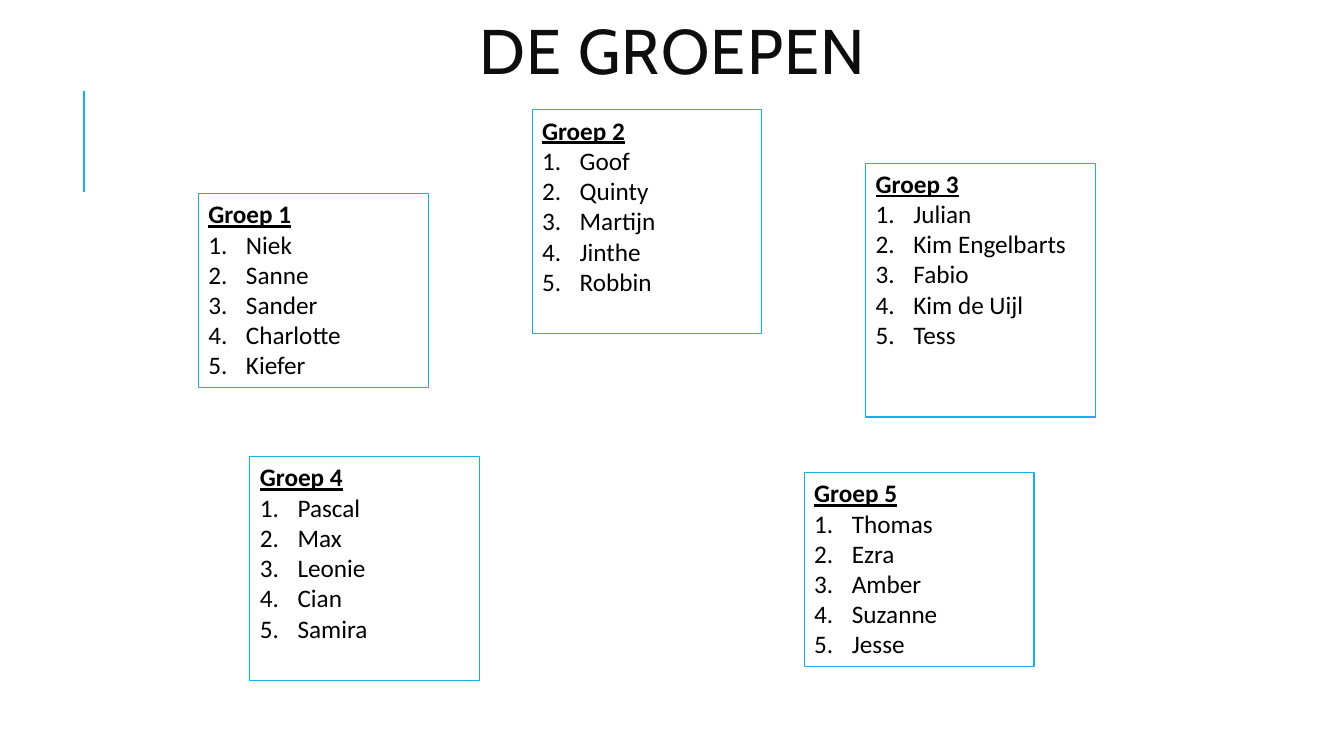
from dataclasses import dataclass

from lxml.etree import SubElement
from pptx import Presentation
from pptx.dml.color import RGBColor as Color
from pptx.enum.shapes import MSO_CONNECTOR as Connector, MSO_SHAPE as Shape
from pptx.enum.text import MSO_ANCHOR as Anchor, MSO_AUTO_SIZE as AutoSize, PP_ALIGN as Align
from pptx.oxml.ns import qn
from pptx.util import Cm, Pt


@dataclass(frozen=True)
class Theme:
    """Colours, fonts and type sizes of the slide."""
    accent: Color = Color(0x1C, 0xAD, 0xE4)
    title_color: Color = Color(0x0D, 0x0D, 0x0D)
    text_color: Color = Color(0, 0, 0)
    title_font: str = "Cabin"
    body_font: str = "Calibri"
    title_size: Pt = Pt(45)
    body_size: Pt = Pt(18)


THEME = Theme()
BOX_WIDTH = 5.79
BOX_HEIGHT = 4.88
LINE_HEIGHT = 0.76
NUMBER_INDENT = Cm(0.95)

# name, left, top, spare lines, members
GROUPS = [
    ("Groep 5", 20.27, 11.91, 0, ["Thomas", "Ezra", "Amber", "Suzanne", "Jesse"]),
    ("Groep 2", 13.41, 2.77, 1, ["Goof", "Quinty", "Martijn", "Jinthe", "Robbin"]),
    ("Groep 3", 21.82, 4.11, 2, ["Julian", "Kim Engelbarts", "Fabio", "Kim de Uijl", "Tess"]),
    ("Groep 4", 6.3, 11.51, 1, ["Pascal", "Max", "Leonie", "Cian", "Samira"]),
    ("Groep 1", 5, 4.88, 0, ["Niek", "Sanne", "Sander", "Charlotte", "Kiefer"]),
]


def apply_format(target, values):
    """Set every attribute named in values on the target."""
    for name, value in values.items():
        setattr(target, name, value)


def add_text(paragraph, text, color, **font_values):
    """Add one formatted run to a paragraph and return it."""
    run = paragraph.add_run()
    run.text = text
    apply_format(run.font, font_values)
    run.font.color.rgb = color
    return run


def number_paragraph(paragraph):
    """Give a paragraph automatic numbering with a hanging indent."""
    properties = paragraph._p.get_or_add_pPr()
    properties.set("marL", str(NUMBER_INDENT))
    properties.set("indent", str(-NUMBER_INDENT))
    SubElement(properties, qn("a:buFont"), typeface="+mj-lt")
    SubElement(properties, qn("a:buAutoNum"), type="arabicPeriod")


def set_title(slide, text):
    """Place and format the title placeholder."""
    title = slide.shapes.title
    apply_format(title, {"left": Cm(2.34), "top": Cm(1.02),
                         "width": Cm(29.21), "height": Cm(0.79)})
    apply_format(title.text_frame, {"auto_size": AutoSize.NONE, "word_wrap": True,
                                    "vertical_anchor": Anchor.MIDDLE})
    paragraph = title.text_frame.paragraphs[0]
    apply_format(paragraph, {"alignment": Align.CENTER, "line_spacing": 0.8})
    run = add_text(paragraph, text, THEME.title_color,
                   name=THEME.title_font, size=THEME.title_size)
    run.font._element.set("spc", "100")


def add_accent_line(slide):
    """Draw the vertical accent line at the left."""
    line = slide.shapes.add_connector(Connector.STRAIGHT, Cm(2.11), Cm(4.83), Cm(2.11), Cm(2.29))
    line.line.color.rgb = THEME.accent
    line.line.width = Pt(1.5)
    SubElement(line._element.spPr, qn("a:effectLst"))


def add_group(slide, name, left, top, spare_lines, members):
    """Draw a box with a group name and its numbered members."""
    height = BOX_HEIGHT + spare_lines * LINE_HEIGHT
    box = slide.shapes.add_shape(Shape.RECTANGLE, Cm(left), Cm(top), Cm(BOX_WIDTH), Cm(height))
    box.shadow.inherit = False
    box.fill.background()
    box.line.color.rgb = THEME.accent
    box.line.width = Pt(0.75)
    frame = box.text_frame
    apply_format(frame, {"word_wrap": True, "vertical_anchor": Anchor.TOP})
    font = {"name": THEME.body_font, "size": THEME.body_size}
    heading = frame.paragraphs[0]
    heading.alignment = Align.LEFT
    add_text(heading, name, THEME.text_color, bold=True, underline=True, **font)
    for member in members:
        paragraph = frame.add_paragraph()
        paragraph.alignment = Align.LEFT
        number_paragraph(paragraph)
        add_text(paragraph, member, THEME.text_color, **font)


def main():
    """Build and save the slide."""
    presentation = Presentation()
    apply_format(presentation, {"slide_width": Cm(33.87), "slide_height": Cm(19.05)})
    slide = presentation.slides.add_slide(presentation.slide_layouts.get_by_name("Title Only"))
    add_accent_line(slide)
    set_title(slide, "DE GROEPEN")
    for group in GROUPS:
        add_group(slide, *group)
    presentation.save("out.pptx")


if __name__ == "__main__":
    main()
